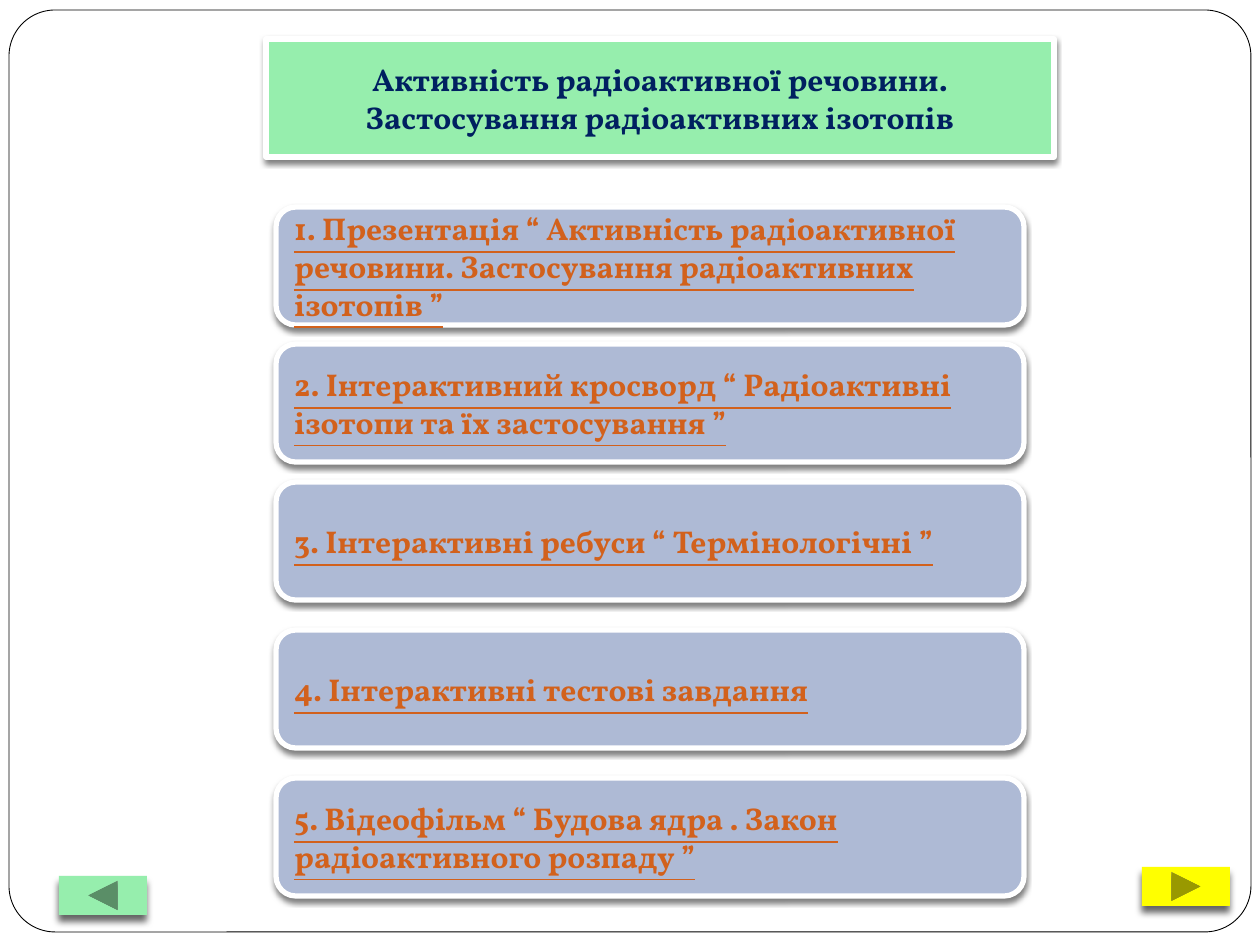
from lxml.etree import SubElement
from pptx import Presentation
from pptx.dml.color import RGBColor
from pptx.enum.shapes import MSO_SHAPE as Shape
from pptx.enum.text import MSO_ANCHOR as Anchor, MSO_AUTO_SIZE as AutoSize, PP_ALIGN as Align
from pptx.oxml.ns import qn
from pptx.util import Emu, Pt

COLORS = {
    "white": "FFFFFF", "black": "000000", "mint": "96EEAD", "navy": "002060",
    "lavender": "AEBAD5", "rust": "D2611C", "yellow": "FFFF00",
}
FONT = "Vollkorn"
EMU_PER_PX = 914400 / 126


def px(length):
    return Emu(round(length * EMU_PER_PX))


def rgb(name):
    return RGBColor.from_string(COLORS[name])


class MenuPage:
    """Style and slide of a menu with underlined entries."""

    def __init__(self, deck):
        self.page = deck.slides.add_slide(deck.slide_layouts[5])

    def shape(self, kind, *bounds):
        return self.page.shapes.add_shape(kind, *map(px, bounds))

    def paint(self, shape, fill, line=None, width=0):
        shape.fill.solid()
        shape.fill.fore_color.rgb = rgb(fill)
        if line:
            shape.line.color.rgb = rgb(line)
            shape.line.width = Pt(width)
        else:
            shape.line.fill.background()
        shape.shadow.inherit = False

    def cast_shadow(self, shape, alpha, blur, distance):
        effects = shape._element.spPr.find(qn("a:effectLst"))
        shadow = SubElement(effects, qn("a:outerShdw"), blurRad=str(Pt(blur)),
                            dist=str(Pt(distance)), dir="5400000", rotWithShape="0")
        color = SubElement(shadow, qn("a:srgbClr"), val=COLORS["black"])
        SubElement(color, qn("a:alpha"), val=str(alpha * 1000))

    def label(self, shape, text, color, align, underline=False):
        frame = shape.text_frame
        frame.word_wrap = True
        frame.auto_size = AutoSize.NONE
        frame.vertical_anchor = Anchor.MIDDLE
        para = frame.paragraphs[0]
        para.alignment = align
        span = para.add_run()
        span.text = text
        font = span.font
        font.name, font.size, font.bold = FONT, Pt(18), True
        font.underline = underline
        font.color.rgb = rgb(color)

    def card(self, shape, fill):
        self.paint(shape, fill, "white", 3)
        self.cast_shadow(shape, 50, 3, 2)

    def frame(self, *bounds):
        shape = self.shape(Shape.ROUNDED_RECTANGLE, *bounds)
        shape.adjustments[0] = 0.05
        self.paint(shape, "white", "black", 0.5)
        # Keep the frame behind the title
        self.page.shapes.title._element.addprevious(shape._element)

    def title(self, text, *bounds):
        box = self.page.shapes.title
        box.left, box.top, box.width, box.height = map(px, bounds)
        outline = SubElement(box._element.spPr, qn("a:prstGeom"),
                             prst="flowChartAlternateProcess")
        SubElement(outline, qn("a:avLst"))
        self.card(box, "mint")
        self.label(box, text, "navy", Align.CENTER)

    def entry(self, text, *bounds):
        box = self.shape(Shape.FLOWCHART_ALTERNATE_PROCESS, *bounds)
        self.card(box, "lavender")
        self.label(box, text, "rust", Align.LEFT, underline=True)

    def button(self, kind, fill, left, top):
        shape = self.shape(kind, left, top, 88, 39)
        self.paint(shape, fill)
        self.cast_shadow(shape, 60, 4, 4)


ENTRIES = [
    (207, "1. Презентація “ Активність радіоактивної речовини. Застосування радіоактивних ізотопів ”"),
    (344, "2. Інтерактивний кросворд “ Радіоактивні ізотопи та їх застосування ”"),
    (482, "3. Інтерактивні ребуси “ Термінологічні ”"),
    (630, "4. Інтерактивні тестові завдання"),
    (778, "5. Відеофільм “ Будова ядра . Закон радіоактивного розпаду ”"),
]


def main():
    deck = Presentation()
    deck.slide_width, deck.slide_height = px(1260), px(945)
    menu = MenuPage(deck)

    # Frame and title
    menu.frame(9, 10, 1242, 922)
    menu.title("Активність радіоактивної речовини. Застосування радіоактивних ізотопів",
               266, 39, 788, 118)

    # Menu entries
    for top, text in ENTRIES:
        menu.entry(text, 276, top, 748, 118)

    # Navigation buttons
    menu.button(Shape.ACTION_BUTTON_FORWARD_OR_NEXT, "yellow", 1142, 867)
    menu.button(Shape.ACTION_BUTTON_BACK_OR_PREVIOUS, "mint", 59, 876)

    deck.save("out.pptx")


if __name__ == "__main__":
    main()
